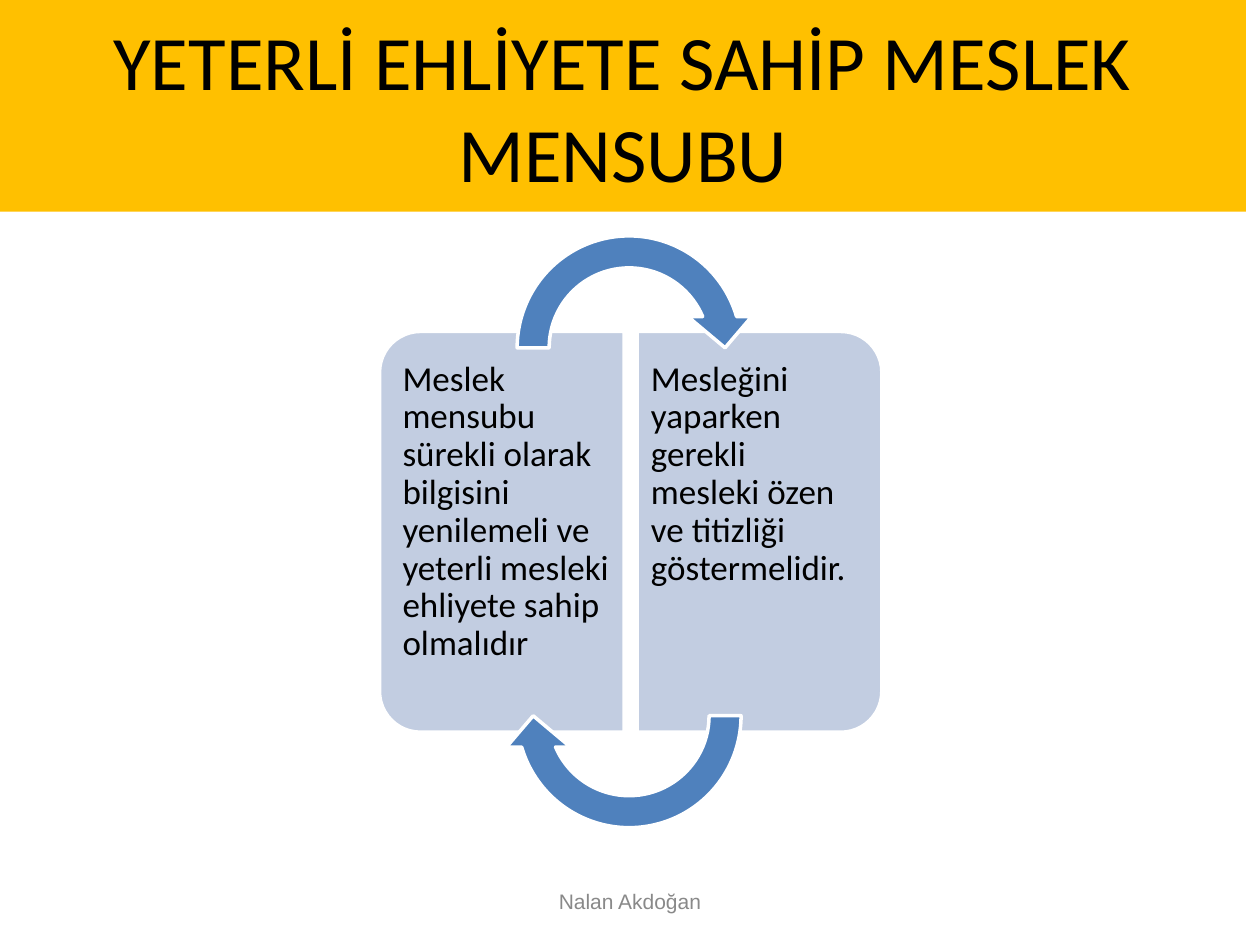
from pptx import Presentation
from pptx.dml.color import RGBColor
from pptx.enum.shapes import MSO_SHAPE
from pptx.enum.text import MSO_ANCHOR, MSO_AUTO_SIZE, PP_ALIGN
from pptx.util import Pt

AMBER = RGBColor(0xFF, 0xC0, 0x00)
PALE_BLUE = RGBColor(0xC2, 0xCD, 0xE1)
BLUE = RGBColor(0x4F, 0x81, 0xBD)
WHITE = RGBColor(0xFF, 0xFF, 0xFF)
BLACK = RGBColor(0x00, 0x00, 0x00)
GREY = RGBColor(0x89, 0x89, 0x89)

# Centre of the diagram and sizes of its parts, in points
CENTRE_X, CENTRE_Y = 360.4, 303.9
PANEL_LENGTH, PANEL_WIDTH, PANEL_OFFSET = 229, 139.8, 73.6
TEXT_WIDTH, TEXT_HEIGHT, TEXT_OFFSET = 133.2, 215.4, 69.6
ARROW_SIZE, ARROW_OFFSET = 146.2, 105.1
WIDE_INSET, NARROW_INSET, VERTICAL_INSET = 8.6, 5.8, 10

LEFT_TEXT = ("Meslek mensubu sürekli olarak bilgisini yenilemeli ve "
             "yeterli mesleki ehliyete sahip olmalıdır")
RIGHT_TEXT = ("Mesleğini yaparken gerekli mesleki özen ve titizliği "
              "göstermelidir.")


def centred(x, y, width, height):
    """Return left, top, width, height of a frame centred on x, y."""
    return [Pt(v) for v in (x - width / 2, y - height / 2, width, height)]


def write(box, text, size, font="Calibri", colour=BLACK, align=PP_ALIGN.LEFT,
          anchor=MSO_ANCHOR.TOP, spacing=None, insets=(7.2, 3.6, 7.2, 3.6)):
    frame = box.text_frame
    frame.word_wrap = True
    frame.auto_size = MSO_AUTO_SIZE.NONE
    frame.vertical_anchor = anchor
    (frame.margin_left, frame.margin_top,
     frame.margin_right, frame.margin_bottom) = [Pt(v) for v in insets]
    para = frame.paragraphs[0]
    para.alignment = align
    para.line_spacing = spacing
    span = para.add_run()
    span.text = text
    span.font.size = Pt(size)
    span.font.name = font
    span.font.color.rgb = colour


def add_outlined_shape(page, kind, frame, fill, rotation, adjustments):
    shape = page.shapes.add_shape(kind, *frame)
    shape.shadow.inherit = False
    shape.rotation = rotation
    shape.fill.solid()
    shape.fill.fore_color.rgb = fill
    shape.line.color.rgb = WHITE
    shape.line.width = Pt(2)
    for index, value in enumerate(adjustments):
        shape.adjustments[index] = value


def add_title(page, text):
    title = page.shapes.title
    title.left, title.top, title.width, title.height = (
        Pt(0), Pt(0), Pt(712), Pt(121))
    title.fill.solid()
    title.fill.fore_color.rgb = AMBER
    write(title, text, 44, align=PP_ALIGN.CENTER, anchor=MSO_ANCHOR.MIDDLE)


def add_panel(page, text, side):
    """Add a half panel with text; side is -1 for left, 1 for right."""
    frame = centred(CENTRE_X + side * PANEL_OFFSET, CENTRE_Y,
                    PANEL_LENGTH, PANEL_WIDTH)
    add_outlined_shape(page, MSO_SHAPE.ROUND_2_SAME_RECTANGLE, frame,
                       PALE_BLUE, side * 90 % 360, (0.167, 0))
    box = page.shapes.add_textbox(*centred(
        CENTRE_X + side * TEXT_OFFSET, CENTRE_Y, TEXT_WIDTH, TEXT_HEIGHT))
    left, right = ((NARROW_INSET, WIDE_INSET) if side < 0
                   else (WIDE_INSET, NARROW_INSET))
    write(box, text, 20, spacing=0.9,
          insets=(left, VERTICAL_INSET, right, VERTICAL_INSET))


def add_cycle_arrow(page, side):
    """Add a circular arrow; side is -1 for top, 1 for bottom."""
    frame = centred(CENTRE_X - 0.9, CENTRE_Y + side * ARROW_OFFSET,
                    ARROW_SIZE, ARROW_SIZE)
    add_outlined_shape(page, MSO_SHAPE.CIRCULAR_ARROW, frame, BLUE,
                       180 if side > 0 else 0,
                       (0.125, 11.42, 204.58, 108, 0.125))


def add_footer(page, text):
    box = page.shapes.add_textbox(Pt(246), Pt(500.5), Pt(228), Pt(29))
    write(box, text, 12, font="Arial", colour=GREY, align=PP_ALIGN.CENTER,
          anchor=MSO_ANCHOR.MIDDLE)


def main():
    deck = Presentation()
    deck.slide_width, deck.slide_height = Pt(720), Pt(540)
    page = deck.slides.add_slide(deck.slide_layouts[5])

    # Title band
    add_title(page, "YETERLİ EHLİYETE SAHİP MESLEK MENSUBU")

    # Two halves joined by a cycle of arrows
    add_panel(page, LEFT_TEXT, -1)
    add_panel(page, RIGHT_TEXT, 1)
    for side in (-1, 1):
        add_cycle_arrow(page, side)

    # Footer
    add_footer(page, "Nalan Akdoğan")
    deck.save("out.pptx")


if __name__ == "__main__":
    main()
